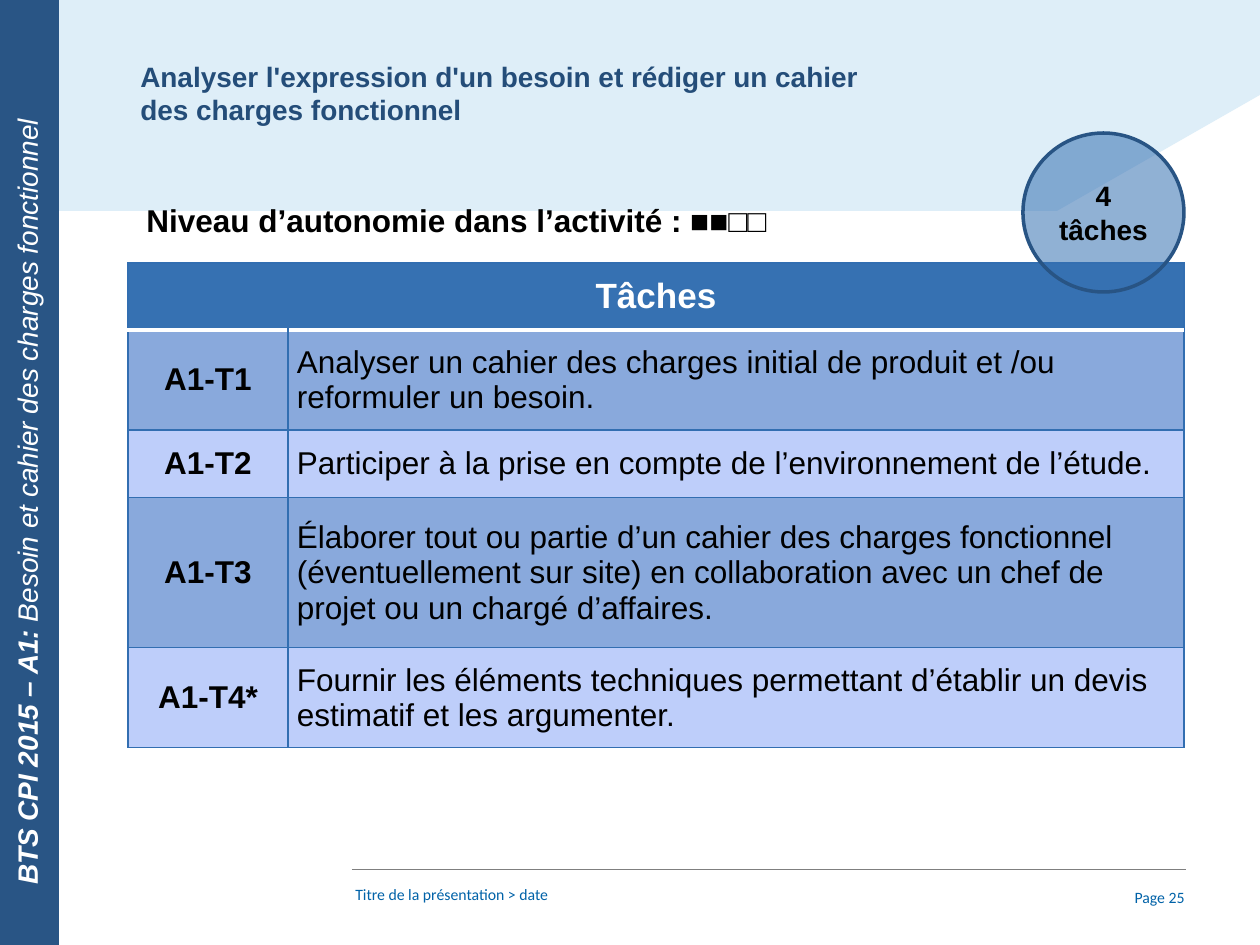
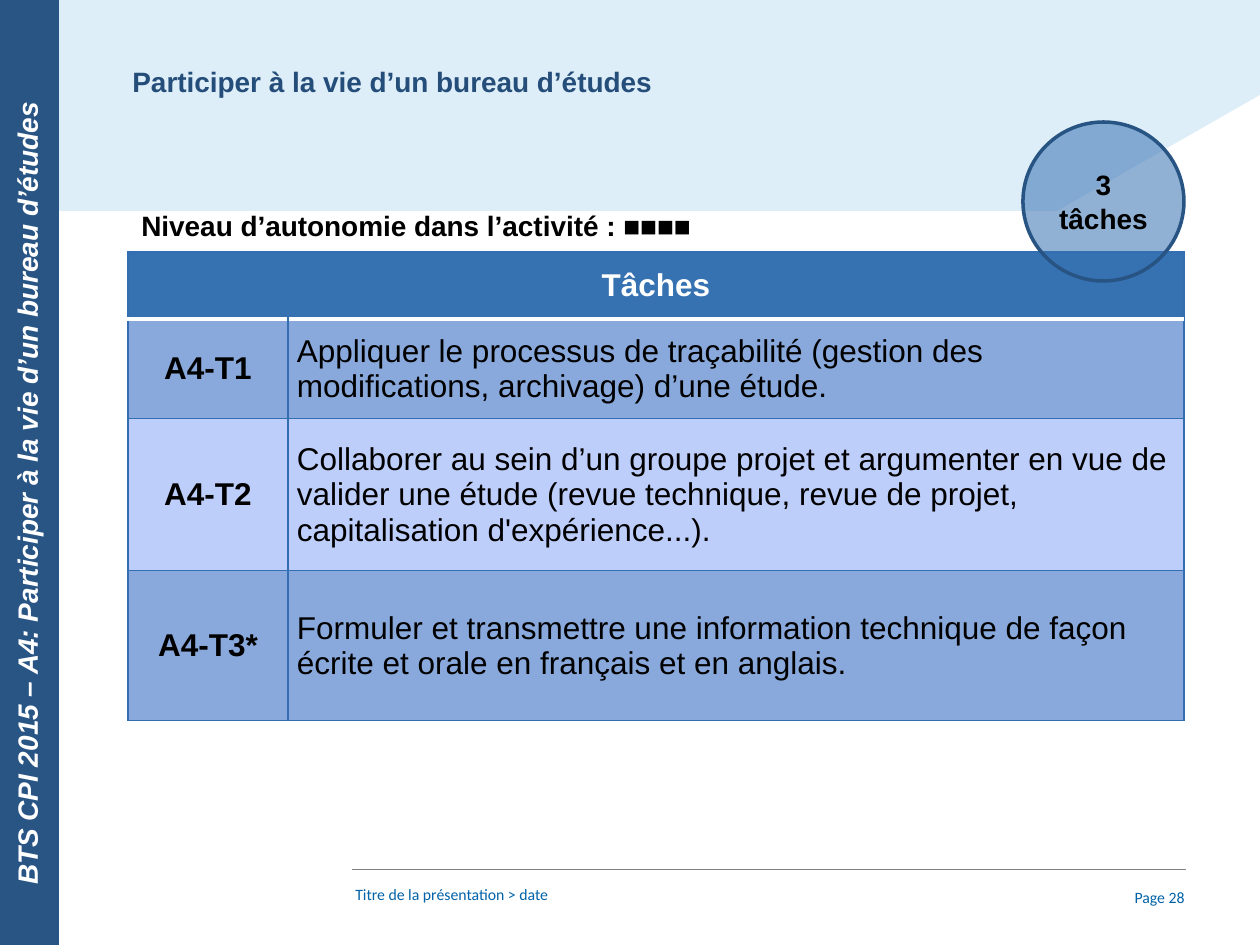
from dataclasses import dataclass

from pptx import Presentation
from pptx import util as u
from pptx.dml.color import RGBColor
from pptx.enum import shapes, text
from pptx.oxml.ns import qn
from lxml import etree

PX = 914400 / 126  # EMU in one px


def px(length):
    return u.Emu(round(length * PX))


@dataclass(frozen=True)
class Theme:
    font: str = "Arial"
    footer_font: str = "Calibri"
    ink: str = "000000"
    white: str = "FFFFFF"
    sky: str = "DEEEF8"
    navy: str = "295585"
    title: str = "244D79"
    footer: str = "0062A8"
    rule: str = "7F7F7F"
    blue: str = "3671B2"
    grid: str = "326EB1"
    badge_edge: str = "285484"
    row_dark: str = "89A9DC"
    row_light: str = "BECEFA"
    small: int = 9
    label: int = 16
    body: int = 18


class Deck:
    def __init__(self, theme):
        self.theme = theme
        self.prs = Presentation()
        self.prs.slide_width, self.prs.slide_height = px(1260), px(945)
        self.slide = None

    def new_slide(self):
        self.slide = self.prs.slides.add_slide(self.prs.slide_layouts[6])

    def style(self, run, size, color, bold=False, italic=False, font=None):
        run.font.name = font or self.theme.font
        run.font.size = u.Pt(size)
        run.font.bold, run.font.italic = bold, italic
        run.font.color.rgb = RGBColor.from_string(color)

    def paint(self, shape, fill, alpha=None, edge=None):
        shape.shadow.inherit = False
        shape.fill.solid()
        shape.fill.fore_color.rgb = RGBColor.from_string(fill)
        if alpha:
            color = shape._element.spPr.find(qn("a:solidFill"))[0]
            etree.SubElement(color, qn("a:alpha"), val=str(alpha * 1000))
        if edge:
            shape.line.color.rgb = RGBColor.from_string(edge)
            shape.line.width = u.Pt(2)
        else:
            shape.line.fill.background()

    def label(self, box, words, size, color, align=text.PP_ALIGN.LEFT,
              anchor=text.MSO_ANCHOR.TOP, bold=True, font=None):
        frame = self.slide.shapes.add_textbox(*map(px, box)).text_frame
        frame.word_wrap = True
        frame.vertical_anchor = anchor
        frame.text = words
        line = frame.paragraphs[0]
        line.alignment = align
        self.style(line.runs[0], size, color, bold, font=font)

    def backdrop(self):
        corners = [(0, 0), (0, 211), (1057, 211), (1260, 95)]
        builder = self.slide.shapes.build_freeform(1260, 0, scale=PX)
        builder.add_line_segments(corners, close=True)
        self.paint(builder.convert_to_shape(), self.theme.sky)

    def footer(self, page):
        t = self.theme
        self.label((343, 879, 745, 50), "Titre de la présentation > date",
                   t.small, t.footer, bold=False, font=t.footer_font)
        rule = self.slide.shapes.add_connector(
            shapes.MSO_CONNECTOR.STRAIGHT, px(352), px(869), px(1186), px(869))
        rule.line.color.rgb = RGBColor.from_string(t.rule)
        rule.line.width = u.Pt(0.5)
        etree.SubElement(rule._element.spPr, qn("a:effectLst"))
        self.label((1086, 876, 111, 43), f"Page {page}", t.small, t.footer,
                   text.PP_ALIGN.RIGHT, text.MSO_ANCHOR.MIDDLE, False, t.footer_font)

    def side_band(self, strong, plain):
        band = self.slide.shapes.add_shape(
            shapes.MSO_SHAPE.RECTANGLE, 0, 0, px(59), px(945))
        self.paint(band, self.theme.navy)
        frame = band.text_frame
        frame.margin_left = frame.margin_right = px(10)
        frame.margin_top = frame.margin_bottom = px(10)
        frame.vertical_anchor = text.MSO_ANCHOR.TOP
        frame._txBody.bodyPr.set("vert", "vert270")
        line = frame.paragraphs[0]
        line.alignment = text.PP_ALIGN.LEFT
        line._p.get_or_add_pPr().set("marL", str(px(50)))
        for words, bold in ((strong, True), (plain, False)):
            if words:
                run = line.add_run()
                run.text = words
                self.style(run, self.theme.label, self.theme.white, bold, italic=True)

    def badge(self, top, words):
        circle = self.slide.shapes.add_shape(
            shapes.MSO_SHAPE.OVAL, px(1023), px(top), px(161), px(159))
        self.paint(circle, self.theme.blue, 55, self.theme.badge_edge)
        frame = circle.text_frame
        frame.word_wrap = True
        frame.vertical_anchor = text.MSO_ANCHOR.MIDDLE
        frame.text = words
        frame.paragraphs[0].alignment = text.PP_ALIGN.CENTER
        self.style(frame.paragraphs[0].runs[0], self.theme.label, self.theme.ink, True)

    def borders(self, cell, **special):
        props = cell._tc.get_or_add_tcPr()
        for side in "LRTB":
            color, width = special.get(side, (self.theme.grid, 0.75))
            edge = etree.SubElement(props, qn(f"a:ln{side}"), w=str(u.Pt(width)))
            fill = etree.SubElement(edge, qn("a:solidFill"))
            etree.SubElement(fill, qn("a:srgbClr"), val=color)

    def cell(self, cell, fill, words, size, color, bold, centred, **edges):
        self.borders(cell, **edges)
        cell.fill.solid()
        cell.fill.fore_color.rgb = RGBColor.from_string(fill)
        cell.vertical_anchor = text.MSO_ANCHOR.MIDDLE
        cell.text = words
        line = cell.text_frame.paragraphs[0]
        line.alignment = text.PP_ALIGN.CENTER if centred else text.PP_ALIGN.LEFT
        for run in line.runs:
            self.style(run, size, color, bold)
        return line

    def task_table(self, top, heading_size, activity, tasks, heights):
        t = self.theme
        table = self.slide.shapes.add_table(
            len(tasks) + 1, 2, px(128), px(top), px(1056), px(sum(heights))).table
        table.first_row = table.horz_banding = False
        for column, width in zip(table.columns, (160, 896)):
            column.width = px(width)
        for row, height in zip(table.rows, heights):
            row.height = px(height)

        # Heading across both columns
        divider = (t.white, 2)
        table.cell(0, 0).merge(table.cell(0, 1))
        for column, words in enumerate(("Tâches", "")):
            self.cell(table.cell(0, column), t.blue, words, heading_size,
                      t.white, True, True, B=divider)

        # Numbered tasks on alternating bands
        for number, (task, mark) in enumerate(tasks, 1):
            fill = t.row_dark if number % 2 else t.row_light
            edges = {"T": divider} if number == 1 else {}
            code = f"{activity}-T{number}{mark}"
            for column, words in enumerate((code, task)):
                cell = table.cell(number, column)
                cell.margin_left = cell.margin_right = px(9)
                cell.margin_top = cell.margin_bottom = 0
                is_code = column == 0
                line = self.cell(cell, fill, words, t.body, t.ink,
                                 is_code, is_code, **edges)
                if not is_code:
                    line.space_after = u.Pt(3)

    def activity_slide(self, page, activity, band, title, title_box, level,
                       level_box, level_size, table_top, heading_size, tasks, heights):
        t = self.theme
        self.new_slide()
        self.backdrop()
        self.footer(page)
        self.side_band(*band)
        self.label(title_box, title, t.label, t.title)
        self.task_table(table_top, heading_size, activity, tasks, heights)
        squares = "■" * level + "□" * (4 - level)
        self.label(level_box, f"Niveau d’autonomie dans l’activité : {squares}",
                   level_size, t.ink)
        self.badge(table_top - 130, f"{len(tasks)} tâches")


def main():
    deck = Deck(Theme())

    # Activity A1
    deck.activity_slide(
        page=25, activity="A1",
        band=("BTS CPI 2015 – A1: ", "Besoin et cahier des charges fonctionnel"),
        title="Analyser l'expression d'un besoin et rédiger un cahier "
              "des charges fonctionnel",
        title_box=(128, 53, 766, 81),
        level=2, level_box=(134, 195, 700, 50), level_size=18,
        table_top=263, heading_size=20,
        tasks=[
            ("Analyser un cahier des charges initial de produit et /ou "
             "reformuler un besoin.", ""),
            ("Participer à la prise en compte de l’environnement de l’étude.", ""),
            ("Élaborer tout ou partie d’un cahier des charges fonctionnel "
             "(éventuellement sur site) en collaboration avec un chef de projet "
             "ou un chargé d’affaires.", ""),
            ("Fournir les éléments techniques permettant d’établir un devis "
             "estimatif et les argumenter.", "*"),
        ],
        heights=(67, 100, 68, 150, 100))

    # Activity A4
    deck.activity_slide(
        page=28, activity="A4",
        band=("BTS CPI 2015 – A4: Participer à la vie d’un bureau d’études", ""),
        title="Participer à la vie d’un bureau d’études",
        title_box=(120, 58, 600, 47),
        level=4, level_box=(129, 202, 640, 47), level_size=16,
        table_top=252, heading_size=18,
        tasks=[
            ("Appliquer le processus de traçabilité (gestion des modifications, "
             "archivage) d’une étude.", ""),
            ("Collaborer au sein d’un groupe projet et argumenter en vue de valider "
             "une étude (revue technique, revue de projet, capitalisation "
             "d'expérience...).", ""),
            ("Formuler et transmettre une information technique de façon écrite "
             "et orale en français et en anglais.", "*"),
        ],
        heights=(67, 100, 152, 150))

    deck.prs.save("out.pptx")


if __name__ == "__main__":
    main()
